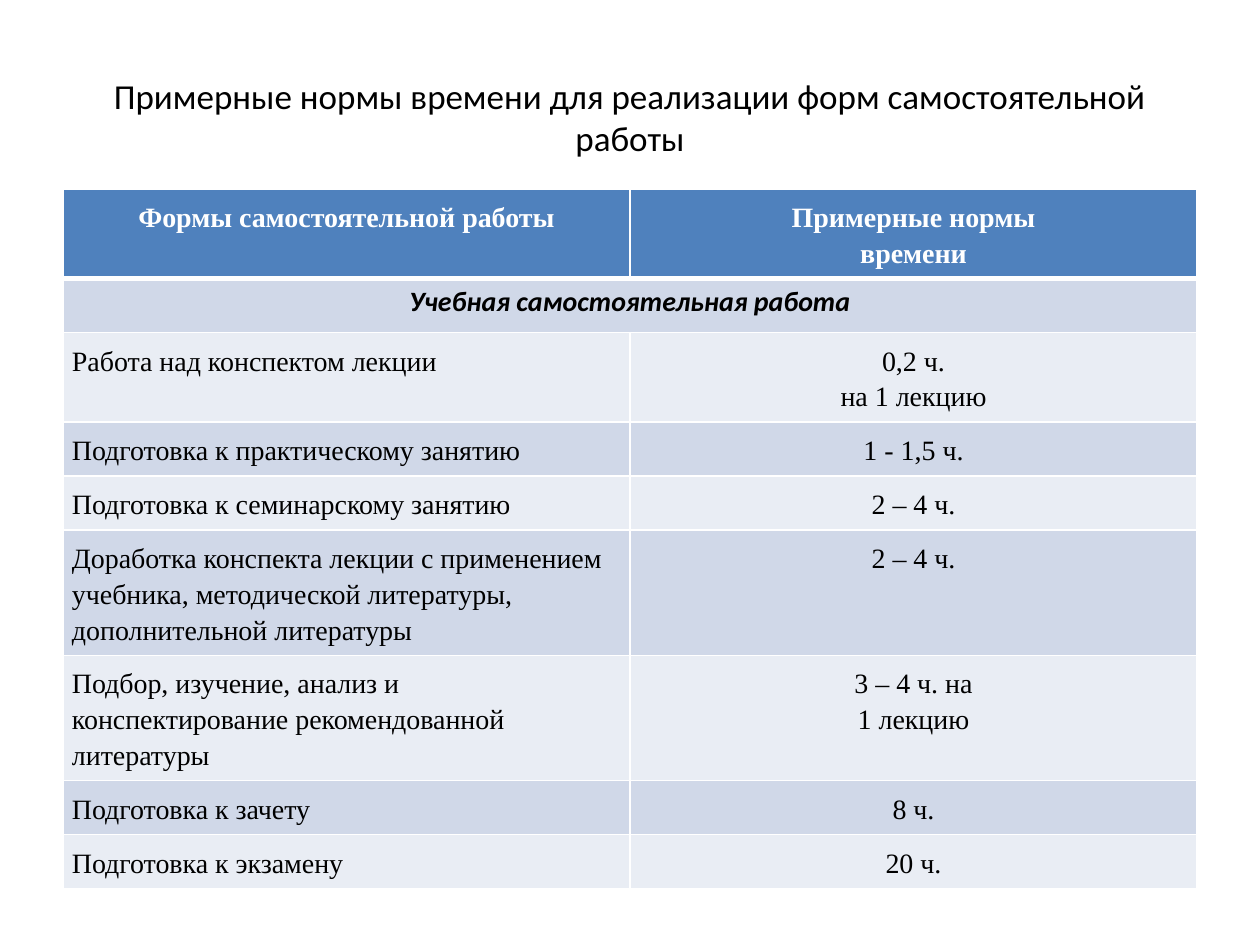
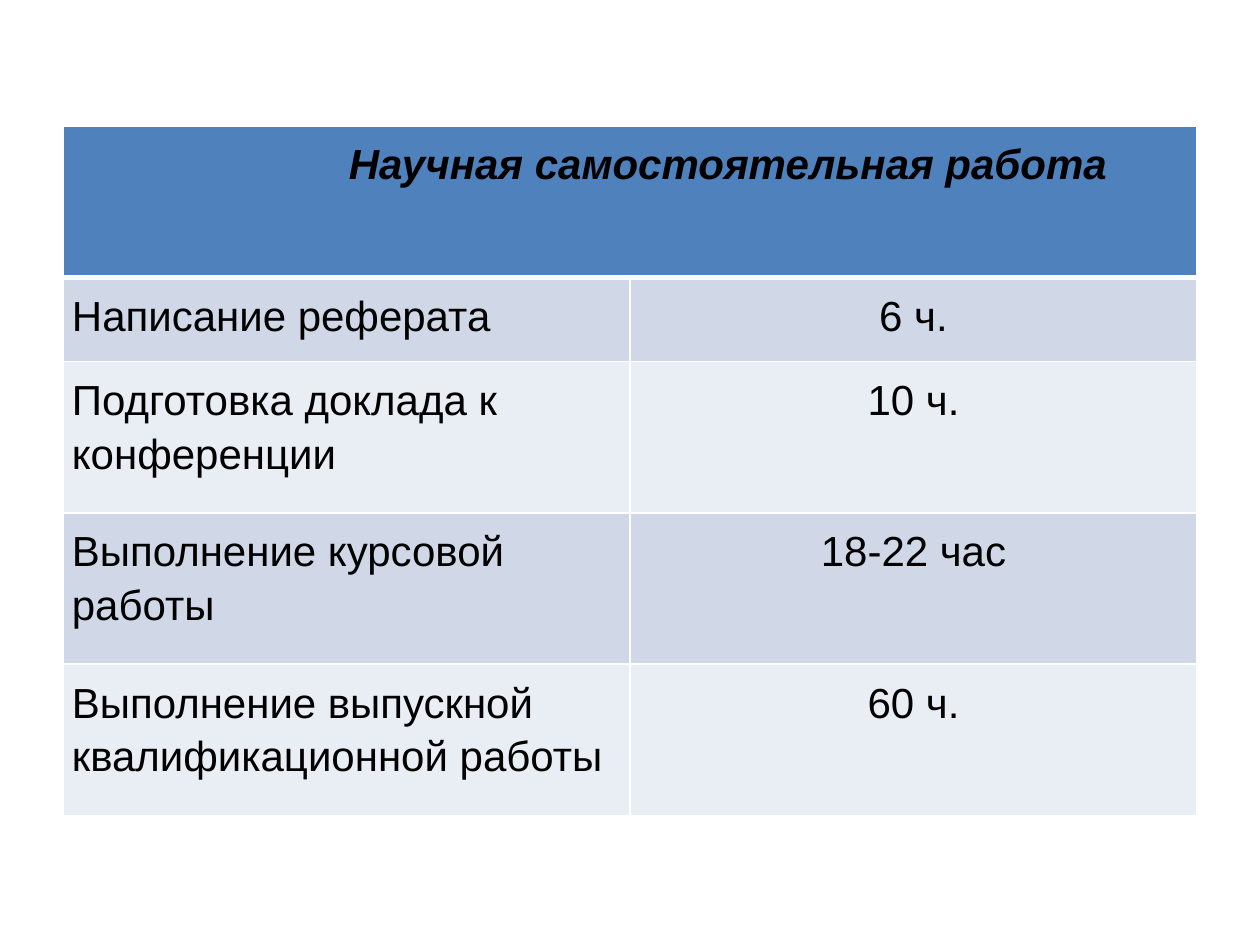
import dataclasses

import lxml.etree
import pptx
import pptx.dml.color
import pptx.enum.text
import pptx.oxml.ns
import pptx.util

Cm = pptx.util.Cm
Pt = pptx.util.Pt
ALIGN = pptx.enum.text.PP_ALIGN
qn = pptx.oxml.ns.qn

HUES = {
    "head": "4F81BD",
    "dark": "D0D8E8",
    "light": "E9EDF4",
    "line": "FFFFFF",
    "text": "000000",
}
LEFT = Cm(1.27)
WIDTH = Cm(22.86)


@dataclasses.dataclass(frozen=True)
class Style:
    font: str
    size: int
    hue: str = "text"
    bold: bool = False
    slant: bool = False
    space: float = 1.15
    side: float = 0.18
    edge: float = 0.18
    indent: float = 0


@dataclasses.dataclass(frozen=True)
class Row:
    high: float
    style: Style
    form: str
    time: str = ""


def tint(hue: str) -> pptx.dml.color.RGBColor:
    return pptx.dml.color.RGBColor.from_string(HUES[hue])


def set_font(para, style: Style) -> None:
    font = para.font
    font.name = style.font
    font.size = Pt(style.size)
    font.bold = style.bold
    font.italic = style.slant
    font.color.rgb = tint(style.hue)


def add_lines(cell, top: int, base: int) -> None:
    props = cell._tc.get_or_add_tcPr()
    for side, width in (("L", 1), ("R", 1), ("T", top), ("B", base)):
        line = lxml.etree.SubElement(props, qn(f"a:ln{side}"), w=str(Pt(width)))
        fill = lxml.etree.SubElement(line, qn("a:solidFill"))
        lxml.etree.SubElement(fill, qn("a:srgbClr"), val=HUES["line"])


def fill_cell(cell, text: str, style: Style, align) -> None:
    cell.margin_left = cell.margin_right = Cm(style.side)
    cell.margin_top = cell.margin_bottom = Cm(style.edge)
    cell.text = text
    for para in cell.text_frame.paragraphs:
        para.alignment = align
        para.line_spacing = style.space
        if style.indent:
            props = para._p.get_or_add_pPr()
            props.set("marL", str(Cm(style.indent)))
            props.set("indent", "0")
        set_font(para, style)


def add_grid(slide, top: float, rows: list[Row]) -> None:
    high = Cm(sum(row.high for row in rows))
    grid = slide.shapes.add_table(len(rows), 2, LEFT, Cm(top), WIDTH, high).table
    for num, row in enumerate(rows):
        grid.rows[num].height = Cm(row.high)
        hue = "head" if num == 0 else "dark" if num % 2 else "light"
        cells = [grid.cell(num, col) for col in range(2)]
        for cell in cells:
            add_lines(cell, 3 if num == 1 else 1, 3 if num == 0 else 1)
            cell.fill.solid()
            cell.fill.fore_color.rgb = tint(hue)
        wide = not row.time
        mid = wide or num == 0
        fill_cell(cells[0], row.form, row.style, ALIGN.CENTER if mid else ALIGN.LEFT)
        if wide:
            cells[0].merge(cells[1])
        else:
            fill_cell(cells[1], row.time, row.style, ALIGN.CENTER)


def add_title(slide, text: str, style: Style) -> None:
    title = slide.shapes.title
    title.left, title.top = LEFT, Cm(0.76)
    title.width, title.height = WIDTH, Cm(3.18)
    frame = title.text_frame
    frame.text = text
    frame.word_wrap = True
    frame.vertical_anchor = pptx.enum.text.MSO_ANCHOR.MIDDLE
    para = frame.paragraphs[0]
    para.alignment = ALIGN.CENTER
    set_font(para, style)


TITLE = Style("Calibri", 20)
HEAD = Style("Times New Roman", 16, hue="line", bold=True)
PART = Style("Calibri", 16, bold=True, slant=True, space=1, side=0.25, edge=0.13)
BODY = Style("Times New Roman", 16)
TOPIC = Style("Arial", 24, bold=True, slant=True, indent=3.95)
LARGE = Style("Arial", 24)

STUDY = [
    Row(1.63, HEAD, "Формы самостоятельной работы", "Примерные нормы\nвремени"),
    Row(1.09, PART, "Учебная самостоятельная работа"),
    Row(1.63, BODY, "Работа над конспектом лекции", "0,2 ч.\nна 1 лекцию"),
    Row(1.09, BODY, "Подготовка к практическому занятию", "1 - 1,5 ч."),
    Row(1.09, BODY, "Подготовка к семинарскому занятию", "2 – 4 ч."),
    Row(
        1.63,
        BODY,
        "Доработка конспекта лекции с применением учебника, "
        "методической литературы, дополнительной литературы",
        "2 – 4 ч.",
    ),
    Row(
        1.63,
        BODY,
        "Подбор, изучение, анализ и конспектирование рекомендованной литературы",
        "3 – 4 ч. на\n1 лекцию",
    ),
    Row(1.09, BODY, "Подготовка к зачету", "8 ч."),
    Row(1.09, BODY, "Подготовка к экзамену", "20 ч."),
]
SCIENCE = [
    Row(3.05, TOPIC, "Научная самостоятельная работа"),
    Row(1.7, LARGE, "Написание реферата", "6 ч."),
    Row(3.05, LARGE, "Подготовка доклада к конференции", "10 ч."),
    Row(3.05, LARGE, "Выполнение курсовой работы", "18-22 час"),
    Row(3.05, LARGE, "Выполнение выпускной квалификационной работы", "60 ч."),
]


def main() -> None:
    deck = pptx.Presentation()
    deck.slide_width, deck.slide_height = Cm(25.4), Cm(19.05)
    first = deck.slides.add_slide(deck.slide_layouts.get_by_name("Title Only"))
    add_title(
        first,
        "Примерные нормы времени для реализации форм самостоятельной работы",
        TITLE,
    )
    add_grid(first, 3.81, STUDY)
    second = deck.slides.add_slide(deck.slide_layouts.get_by_name("Blank"))
    add_grid(second, 2.54, SCIENCE)
    deck.save("out.pptx")


if __name__ == "__main__":
    main()
